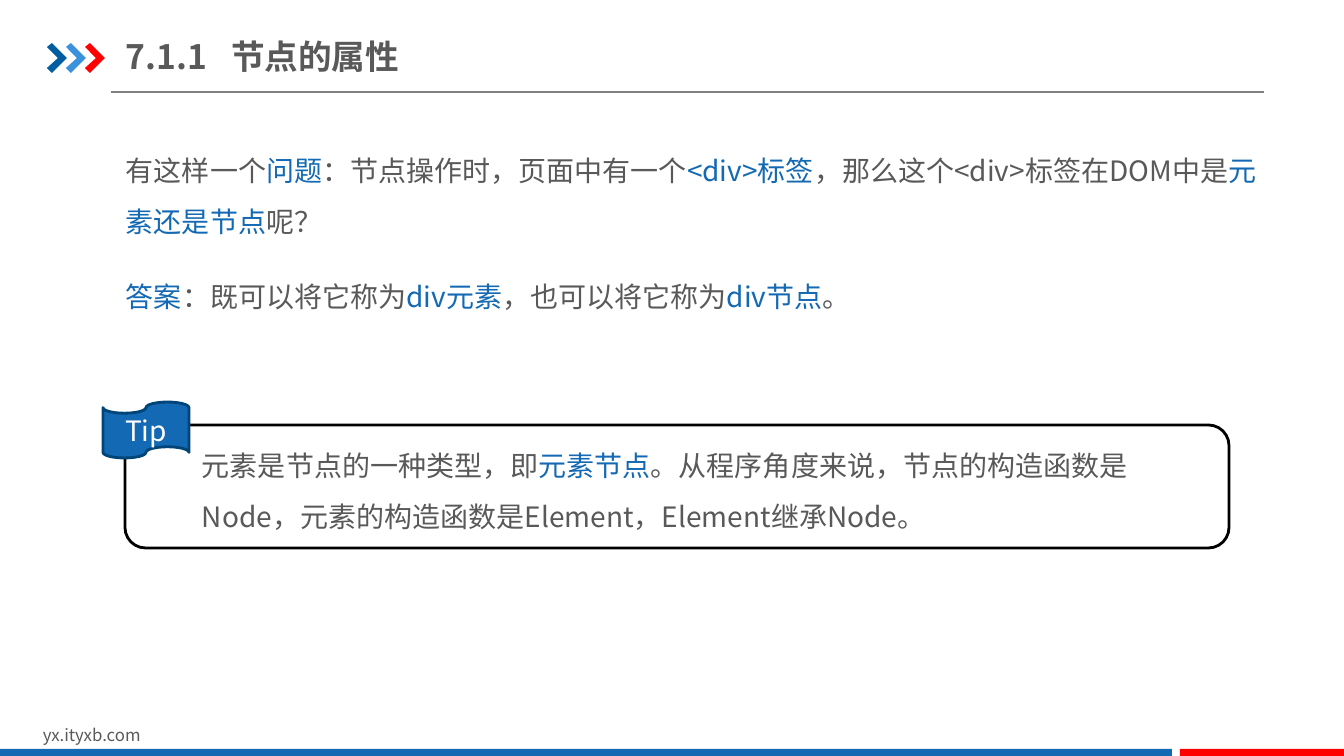
from dataclasses import dataclass

from lxml.etree import SubElement
from pptx import Presentation
from pptx.dml.color import RGBColor
from pptx.enum.shapes import MSO_CONNECTOR, MSO_SHAPE
from pptx.enum.text import MSO_ANCHOR, MSO_AUTO_SIZE, PP_ALIGN
from pptx.oxml.ns import qn
from pptx.util import Pt

# Content; parts between bars are set in the accent colour
TITLE = "7.1.1\t节点的属性"
BODY = [
    "有这样一个|问题|：节点操作时，页面中有一个|<div>标签|，那么这个<div>标签在DOM中是|元素还是节点|呢？",
    "|答案|：既可以将它称为|div元素|，也可以将它称为|div节点|。",
]
NOTE = ["元素是节点的一种类型，即|元素节点|。从程序角度来说，节点的构造函数是Node，元素的构造函数是Element，Element继承Node。"]
TAG = "Tip"
SITE = "yx.ityxb.com"


@dataclass(frozen=True)
class Theme:
    font: str = "Noto Sans CJK SC"
    text: str = "595959"
    accent: str = "1369B3"
    bar: str = "1369B2"
    red: str = "FF0000"
    navy: str = "005DA2"
    sky: str = "3992DB"
    edge: str = "004578"
    rule: str = "808080"
    black: str = "000000"
    white: str = "FFFFFF"
    head: int = 24
    body: int = 20
    foot: int = 12


THEME = Theme()
WIDE, HIGH = 1344, 756
SCALE = 914400 / 100.8


def px(n):
    return round(n * SCALE)


def rgb(code):
    return RGBColor.from_string(code)


def style(run, size, color, bold=False):
    font = run.font
    font.size, font.bold = Pt(size), bold
    font.color.rgb = rgb(color)
    font.name = THEME.font
    SubElement(run._r.get_or_add_rPr(), qn("a:ea"), typeface=THEME.font)


def add_text(shapes, box, lines, size, space=1.0, gap=0):
    """Add a wrapped text box; every second part of a line is accented."""
    frame = shapes.add_textbox(*map(px, box)).text_frame
    frame.word_wrap = True
    for i, line in enumerate(lines):
        para = frame.add_paragraph() if i else frame.paragraphs[0]
        para.line_spacing = space
        if i:
            para.space_before = Pt(gap)
        for j, part in enumerate(line.split("|")):
            if part:
                run = para.add_run()
                run.text = part
                style(run, size, THEME.accent if j % 2 else THEME.text)


def paint(shape, fill=None, line=None):
    shape.shadow.inherit = False
    if fill:
        shape.fill.solid()
        shape.fill.fore_color.rgb = rgb(fill)
    else:
        shape.fill.background()
    if line:
        shape.line.color.rgb = rgb(line)
        shape.line.width = Pt(2)
    else:
        shape.line.fill.background()


def add_box(shapes, kind, box, fill=None, line=None):
    shape = shapes.add_shape(kind, *map(px, box))
    paint(shape, fill, line)
    return shape


def add_title(shapes):
    title = shapes.title
    title.left, title.top, title.width, title.height = map(px, (126, 29, 578, 55))
    frame = title.text_frame
    frame.text = TITLE
    frame.auto_size = MSO_AUTO_SIZE.NONE
    frame.vertical_anchor = MSO_ANCHOR.MIDDLE
    frame.margin_left = frame.margin_right = 0
    frame.margin_top = frame.margin_bottom = px(7)
    para = frame.paragraphs[0]
    tabs = SubElement(para._p.get_or_add_pPr(), qn("a:tabLst"))
    SubElement(tabs, qn("a:tab"), pos=str(px(105)), algn="l")
    para.alignment = PP_ALIGN.LEFT
    for run in para.runs:
        style(run, THEME.head, THEME.text, True)


def add_frame(shapes):
    """Add the header rule, the three chevrons and the footer."""
    rule = shapes.add_connector(MSO_CONNECTOR.STRAIGHT, px(111), px(92), px(1264), px(92))
    rule.line.color.rgb = rgb(THEME.rule)
    rule.line.width = Pt(0.75)
    SubElement(rule._element.spPr, qn("a:effectLst"))

    outline = [(0, 4), (5, 0), (20, 15), (5, 30), (0, 25), (11, 15)]
    for i, color in enumerate((THEME.navy, THEME.sky, THEME.red)):
        points = [(47 + 19 * i + x, 43 + y) for x, y in outline]
        build = shapes.build_freeform(*points[0], scale=SCALE)
        build.add_line_segments(points[1:], close=True)
        paint(build.convert_to_shape(), color)

    add_text(shapes, (33, 720, 321, 30), [SITE], THEME.foot)
    top, split, gap = 749, 1172, 8
    start = split + gap
    add_box(shapes, MSO_SHAPE.RECTANGLE, (0, top, split, HIGH - top), THEME.bar)
    add_box(shapes, MSO_SHAPE.RECTANGLE, (start, top, WIDE - start, HIGH - top), THEME.red)


def add_tip(shapes):
    add_text(shapes, (192, 427, 1024, 112), NOTE, THEME.body, 1.5)
    add_box(shapes, MSO_SHAPE.ROUNDED_RECTANGLE, (125, 425, 1104, 123), line=THEME.black)
    flag = add_box(shapes, MSO_SHAPE.FLOWCHART_PUNCHED_TAPE, (103, 402, 86, 56),
                   THEME.accent, THEME.edge)
    frame = flag.text_frame
    frame.text = TAG
    frame.vertical_anchor = MSO_ANCHOR.MIDDLE
    para = frame.paragraphs[0]
    para.alignment = PP_ALIGN.CENTER
    style(para.runs[0], THEME.body, THEME.white)


def main():
    deck = Presentation()
    deck.slide_width, deck.slide_height = px(WIDE), px(HIGH)
    shapes = deck.slides.add_slide(deck.slide_layouts[5]).shapes
    add_title(shapes)
    add_frame(shapes)
    add_text(shapes, (116, 132, 1159, 188), BODY, THEME.body, 1.5, 17.5)
    add_tip(shapes)
    deck.save("out.pptx")


if __name__ == "__main__":
    main()
